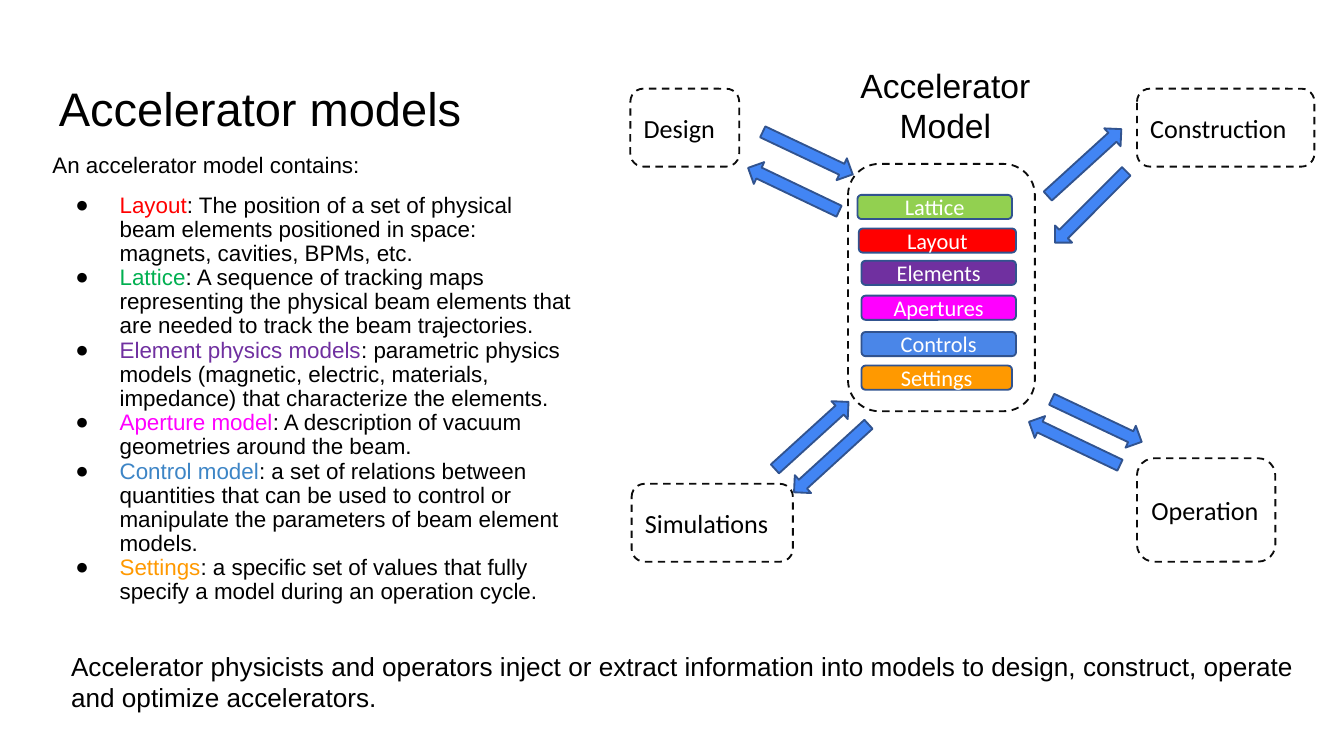
from dataclasses import dataclass

from lxml.etree import SubElement
from pptx import Presentation
from pptx.dml.color import RGBColor
from pptx.enum.dml import MSO_LINE
from pptx.enum.shapes import MSO_SHAPE
from pptx.enum.text import MSO_ANCHOR, PP_ALIGN
from pptx.oxml.ns import qn
from pptx.util import Inches, Pt


@dataclass(frozen=True)
class Theme:
    heading_font: str = "Arial"
    label_font: str = "Calibri"
    title_size: float = 25.2
    model_size: float = 18
    stage_size: float = 14
    body_size: float = 12
    text: str = "000000"
    white: str = "FFFFFF"
    dashed_line: str = "0C0C0C"
    solid_line: str = "31538F"
    arrow: str = "4285F4"
    layout: str = "FF0000"
    lattice_text: str = "00B050"
    lattice_fill: str = "92D050"
    elements: str = "7030A0"
    apertures: str = "FF00FF"
    controls_text: str = "3D85C6"
    controls_fill: str = "4A86E8"
    settings: str = "FF9900"


theme = Theme()
deck = Presentation()
deck.slide_width = Inches(10)
deck.slide_height = deck.slide_width * 9 // 16
page = deck.slides.add_slide(deck.slide_layouts[6])


def write(box, paragraphs, font, size, align=PP_ALIGN.LEFT, anchor=MSO_ANCHOR.TOP, inset=(0.1, 0.1)):
    """Fill a box with paragraphs, each a list of (text, colour) spans."""
    frame = box.text_frame
    across, down = map(Inches, inset)
    frame_format = {
        "word_wrap": True, "vertical_anchor": anchor,
        "margin_left": across, "margin_right": across,
        "margin_top": down, "margin_bottom": down,
    }
    for name, value in frame_format.items():
        setattr(frame, name, value)
    for index, spans in enumerate(paragraphs):
        para = frame.add_paragraph() if index else frame.paragraphs[0]
        para.alignment = align
        for text, color in spans:
            span = para.add_run()
            span.text = text
            for name, value in {"name": font, "size": Pt(size)}.items():
                setattr(span.font, name, value)
            span.font.color.rgb = RGBColor.from_string(color)


def add_outlined(preset, place, line, fill=None):
    shape = page.shapes.add_shape(preset, *map(Inches, place))
    shape.shadow.inherit = False
    if fill:
        shape.fill.solid()
        shape.fill.fore_color.rgb = RGBColor.from_string(fill)
    else:
        shape.fill.background()
        shape.line.dash_style = MSO_LINE.DASH
    shape.line.color.rgb = RGBColor.from_string(line)
    shape.line.width = Pt(1)
    return shape


label_inset = (0.07, 0.04)

# Headings and closing statement
title = page.shapes.add_textbox(*map(Inches, (0.34, 0.49, 3.67, 0.63)))
write(title, [[("Accelerator models", theme.text)]], theme.heading_font, theme.title_size)

model_heading = page.shapes.add_textbox(*map(Inches, (6.22, 0.38, 1.63, 0.81)))
write(model_heading, [[("Accelerator", theme.text)], [("Model", theme.text)]],
      theme.heading_font, theme.model_size, PP_ALIGN.CENTER)

summary = page.shapes.add_textbox(*map(Inches, (0.43, 4.74, 9.38, 0.67)))
write(summary, [[(
    "Accelerator physicists and operators inject or extract information into models "
    "to design, construct, operate and optimize accelerators.", theme.text)]],
    theme.heading_font, theme.stage_size)

# Contents of a model
contents = [
    ("Layout", theme.layout,
     "The position of a set of physical beam elements positioned in space: magnets, cavities, BPMs, etc."),
    ("Lattice", theme.lattice_text,
     "A sequence of tracking maps representing the physical beam elements that are needed "
     "to track the beam trajectories."),
    ("Element physics models", theme.elements,
     "parametric physics models (magnetic, electric, materials, impedance) that characterize the elements."),
    ("Aperture model", theme.apertures, "A description of vacuum geometries around the beam."),
    ("Control model", theme.controls_text,
     "a set of relations between quantities that can be used to control or manipulate "
     "the parameters of beam element models."),
    ("Settings", theme.settings,
     "a specific set of values that fully specify a model during an operation cycle."),
]
body = page.shapes.add_textbox(*map(Inches, (0.32, 1.11, 4.02, 3.59)))
write(body,
      [[("An accelerator model contains:", theme.text)]]
      + [[(term, color), (f": {meaning}", theme.text)] for term, color, meaning in contents],
      theme.heading_font, theme.body_size, inset=label_inset)
for index, para in enumerate(body.text_frame.paragraphs):
    para.line_spacing = 0.9
    para.space_before = Pt(8 if index == 1 else 0)
    if index:
        properties = para._p.get_or_add_pPr()
        properties.set("marL", str(Inches(0.5)))
        properties.set("indent", str(Inches(-0.33)))
        bullet_color = SubElement(properties, qn("a:buClr"))
        SubElement(bullet_color, qn("a:srgbClr")).set("val", theme.text)
        SubElement(properties, qn("a:buFont")).set("typeface", theme.heading_font)
        SubElement(properties, qn("a:buChar")).set("char", "●")
    para.font.size = Pt(theme.body_size)

# Model container and its layers
add_outlined(MSO_SHAPE.ROUNDED_RECTANGLE, (6.31, 1.22, 1.39, 1.84), theme.dashed_line)
layers = [
    ("Lattice", theme.lattice_fill, 6.38, 1.45, 1.15),
    ("Layout", theme.layout, 6.39, 1.7, 1.17),
    ("Elements", theme.elements, 6.41, 1.94, 1.15),
    ("Apertures", theme.apertures, 6.41, 2.2, 1.15),
    ("Controls", theme.controls_fill, 6.41, 2.47, 1.15),
    ("Settings", theme.settings, 6.41, 2.72, 1.12),
]
for name, fill, left, top, width in layers:
    layer = add_outlined(MSO_SHAPE.ROUNDED_RECTANGLE, (left, top, width, 0.18), theme.solid_line, fill)
    write(layer, [[(name, theme.white)]], theme.label_font, theme.body_size,
          PP_ALIGN.CENTER, MSO_ANCHOR.MIDDLE, label_inset)

# Life-cycle stages around the model
stages = {
    "Design": (4.69, 0.66, 0.81, 0.58),
    "Construction": (8.46, 0.66, 1.32, 0.58),
    "Simulations": (4.7, 3.6, 1.2, 0.58),
    "Operation": (8.46, 3.41, 1.03, 0.77),
}
for name, place in stages.items():
    stage = add_outlined(MSO_SHAPE.ROUNDED_RECTANGLE, place, theme.dashed_line)
    write(stage, [[(name, theme.text)]], theme.label_font, theme.stage_size,
          anchor=MSO_ANCHOR.MIDDLE, inset=label_inset)

# Exchange arrows: left, top, width, rotation
arrows = [
    (5.64, 1.05, 0.74, 25.3), (5.53, 1.32, 0.75, 205.5),
    (7.7, 1.12, 0.74, 317.7), (7.74, 1.45, 0.75, 135),
    (5.67, 3.15, 0.74, 317.7), (5.81, 3.32, 0.75, 137.6),
    (7.79, 3.04, 0.74, 25.3), (7.62, 3.21, 0.75, 205.5),
]
for left, top, width, rotation in arrows:
    arrow = add_outlined(MSO_SHAPE.RIGHT_ARROW, (left, top, width, 0.18), theme.solid_line, theme.arrow)
    arrow.rotation = rotation

deck.save("out.pptx")
